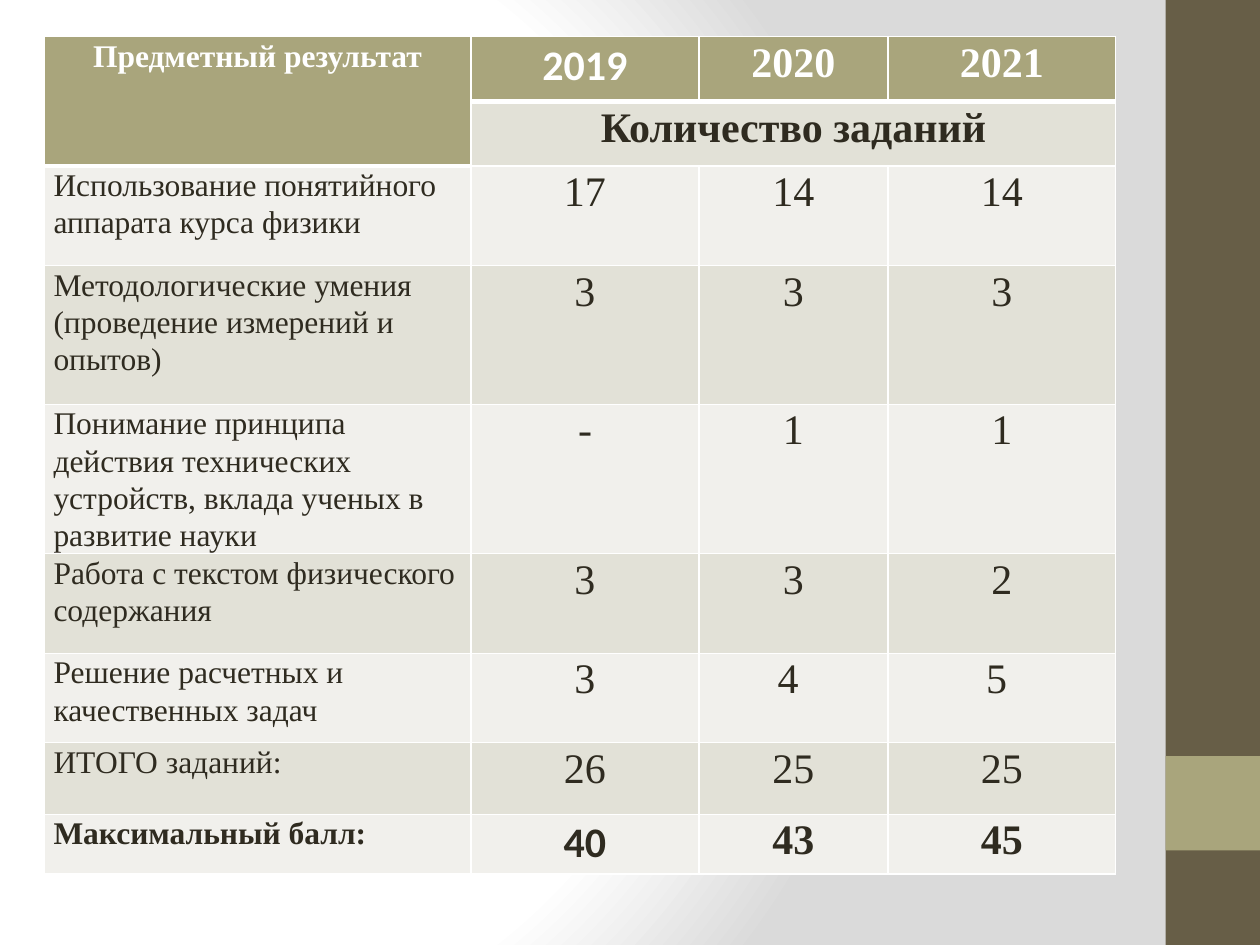
from typing import NamedTuple

from lxml import etree
from pptx import Presentation
from pptx.dml.color import RGBColor
from pptx.enum.shapes import MSO_SHAPE
from pptx.enum.text import PP_ALIGN
from pptx.oxml import parse_xml
from pptx.oxml.ns import nsdecls, qn
from pptx.slide import Slide
from pptx.table import _Cell
from pptx.util import Pt

RECTANGLE = MSO_SHAPE.RECTANGLE
LEFT, CENTER = PP_ALIGN.LEFT, PP_ALIGN.CENTER
SERIF, SANS = "Times New Roman", "Calibri"
COLORS = {
    "white": "FFFFFF",
    "gray": "DADADA",
    "brown": "675E47",
    "olive": "A9A57C",
    "dark band": "E2E1D7",
    "light band": "F1F0EC",
    "text": "2F2B20",
}
COLUMN_WIDTHS = (244, 130.2, 108, 130.2)
ROW_HEIGHTS = (37.2, 36.8, 57, 79.2, 79.2, 57, 51, 41, 34)


class Bar(NamedTuple):
    top: float
    height: float
    color: str


class Row(NamedTuple):
    label: str
    values: tuple[str, str, str]
    bold: bool = False
    first_font: str = SERIF


BARS = (Bar(0, 540, "brown"), Bar(432, 54, "olive"))
ROWS = (
    Row("Предметный результат", ("2019", "2020", "2021"), True, SANS),
    Row("", ("Количество заданий", "", ""), True),
    Row("Использование понятийного аппарата курса физики", ("17", "14", "14")),
    Row("Методологические умения (проведение измерений и опытов)", ("3", "3", "3")),
    Row(
        "Понимание принципа действия технических устройств, вклада ученых в развитие науки",
        ("-", "1", "1"),
    ),
    Row("Работа с текстом физического содержания", ("3", "3", "2")),
    Row("Решение расчетных и качественных задач", ("3", "4 ", "5 ")),
    Row("ИТОГО заданий:", ("26", "25", "25")),
    Row("Максимальный балл:", ("40", "43", "45"), True, SANS),
)


def set_background(slide: Slide) -> None:
    """Fill the slide with a circular gradient from white to gray."""
    slide.background.fill.gradient()
    old_fill = next(slide.element.iter(qn("a:gradFill")))
    stops = "".join(
        f'<a:gs pos="{position * 1000}"><a:srgbClr val="{COLORS[color]}"/></a:gs>'
        for position, color in ((0, "white"), (75, "white"), (100, "gray"))
    )
    new_fill = parse_xml(
        f'<a:gradFill {nsdecls("a")} rotWithShape="1"><a:gsLst>{stops}</a:gsLst>'
        '<a:path path="circle"><a:fillToRect l="20000" t="50000" r="100000" b="50000"/>'
        "</a:path></a:gradFill>"
    )
    old_fill.getparent().replace(old_fill, new_fill)


def add_bar(slide: Slide, bar: Bar) -> None:
    """Draw one block of the strip on the right edge."""
    shape = slide.shapes.add_shape(RECTANGLE, Pt(666), Pt(bar.top), Pt(54), Pt(bar.height))
    shape.shadow.inherit = False
    shape.fill.solid()
    shape.fill.fore_color.rgb = RGBColor.from_string(COLORS[bar.color])
    shape.line.fill.background()


def set_borders(cell: _Cell, row_index: int) -> None:
    """Give a cell white borders, with a thick rule under the header row."""
    properties = cell._tc.get_or_add_tcPr()
    thick_side = {0: "lnB", 1: "lnT"}.get(row_index)
    for side in ("lnL", "lnR", "lnT", "lnB"):
        width = Pt(3 if side == thick_side else 1)
        line = etree.SubElement(properties, qn(f"a:{side}"), w=str(width))
        fill = etree.SubElement(line, qn("a:solidFill"))
        etree.SubElement(fill, qn("a:srgbClr"), val=COLORS["white"])


def fill_cell(cell: _Cell, row_index: int, column_index: int) -> None:
    """Write and style one cell of the table."""
    row = ROWS[row_index]
    is_label, is_header = column_index == 0, row_index == 0
    band = "dark band" if row_index % 2 else "light band"
    set_borders(cell, row_index)
    cell.fill.solid()
    cell.fill.fore_color.rgb = RGBColor.from_string(COLORS["olive" if is_header else band])
    cell.margin_left = cell.margin_right = Pt(5.4)
    cell.margin_top = cell.margin_bottom = 0
    if cell.is_spanned:
        return
    cell.text = (row.label, *row.values)[column_index]
    paragraph = cell.text_frame.paragraphs[0]
    paragraph.alignment = LEFT if is_label and not is_header else CENTER
    paragraph.line_spacing = 1.07
    paragraph.font.name = row.first_font if column_index == 1 else SERIF
    paragraph.font.size = Pt(18 if is_label else 24)
    paragraph.font.bold = row.bold
    paragraph.font.color.rgb = RGBColor.from_string(COLORS["white" if is_header else "text"])


def add_results_table(slide: Slide) -> None:
    """Build the table of subject results by year."""
    table = slide.shapes.add_table(
        len(ROWS), len(COLUMN_WIDTHS), Pt(25.2), Pt(20.9),
        Pt(sum(COLUMN_WIDTHS)), Pt(sum(ROW_HEIGHTS)),
    ).table
    for column, width in zip(table.columns, COLUMN_WIDTHS):
        column.width = Pt(width)
    for row, height in zip(table.rows, ROW_HEIGHTS):
        row.height = Pt(height)
    table.cell(0, 0).merge(table.cell(1, 0))
    table.cell(1, 1).merge(table.cell(1, 3))
    for row_index in range(len(ROWS)):
        for column_index in range(len(COLUMN_WIDTHS)):
            fill_cell(table.cell(row_index, column_index), row_index, column_index)


def main() -> None:
    """Build and save the presentation."""
    presentation = Presentation()
    presentation.slide_width, presentation.slide_height = Pt(720), Pt(540)
    slide = presentation.slides.add_slide(presentation.slide_layouts[6])
    set_background(slide)
    for bar in BARS:
        add_bar(slide, bar)
    add_results_table(slide)
    presentation.save("out.pptx")


if __name__ == "__main__":
    main()
